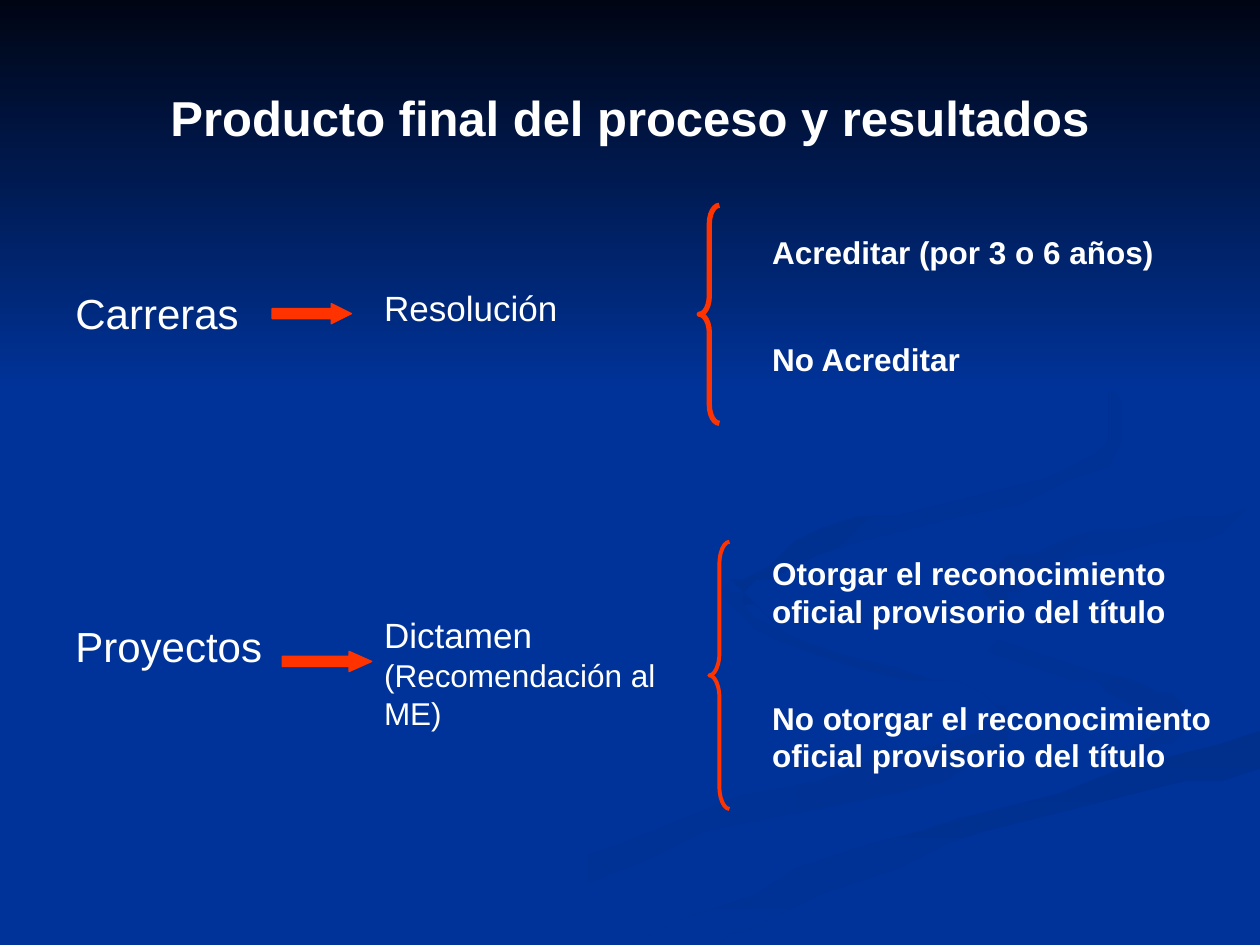
"""Build the slide on final products and results on a 100 by 75 grid of square cells."""
from dataclasses import dataclass
from typing import NamedTuple

from pptx import Presentation, util as u
from pptx.dml.color import RGBColor
from pptx.enum import shapes, text

COLUMNS, ROWS = 100, 75
CELL = u.Inches(0.1)
CURVE_STEPS = 5
FONT = "Arial"
WHITE = RGBColor(0xFF, 0xFF, 0xFF)
RED = RGBColor(0xFF, 0x33, 0x00)
BLUE = RGBColor(0x00, 0x33, 0x99)
SHADE = RGBColor(0x00, 0x31, 0x93)
DEEP = RGBColor(0x00, 0x2F, 0x8C)
NIGHT = RGBColor(0x00, 0x05, 0x14)


class Box(NamedTuple):
    left: float
    top: float
    width: float
    height: float


@dataclass
class Ribbon:
    start: RGBColor
    end: RGBColor
    angle: int
    edges: list


@dataclass
class Entry:
    runs: list
    before: float = 0
    bold: bool = False


@dataclass
class Column:
    box: Box
    inset: float
    entries: list


@dataclass
class Mark:
    kind: shapes.MSO_SHAPE
    box: Box
    bend: float
    weight: float


RIBBONS = [
    Ribbon(BLUE, SHADE, 0, [
        [(57.5, 46), (62, 50), (76, 54.5), (78, 57.5), (54, 65), (30, 75)],
        [(36, 75), (56, 66.5), (78, 60.5), (78, 55.3), (62, 51), (57, 47)]]),
    Ribbon(BLUE, SHADE, 45, [
        [(72.4, 46.4), (77, 50.5), (92, 54.7), (94, 58), (89.4, 60.5)],
        [(91.8, 58), (87, 54.5), (75, 50), (72.4, 46.4)]]),
    Ribbon(DEEP, BLUE, 90, [
        [(50.3, 75), (63, 69.3), (80, 63.8), (99.8, 58)],
        [(99.8, 61), (82, 65), (65, 71), (57, 75)]]),
    Ribbon(SHADE, BLUE, 45, [
        [(82.6, 49.6), (78, 46), (84, 43), (99.8, 40.2)],
        [(99.8, 42), (86, 44.3), (80.5, 47.5), (82.6, 49.6)]]),
    Ribbon(DEEP, BLUE, 45, [
        [(76.2, 23.3), (86.5, 29), (88, 37), (68, 43), (59.3, 47), (62.2, 50)],
        [(57.7, 46.2), (67.6, 41.4), (85.2, 37.4), (87, 30), (76.2, 23.3)]]),
    Ribbon(NIGHT, BLUE, 90, [[(0, 0), (COLUMNS, 0)], [(COLUMNS, 30.8), (0, 30.8)]]),
]

TEXT_COLUMNS = [
    Column(Box(5, 17.5, 19, 49.5), 5.3, [
        Entry([("Carreras", 24)]),
        Entry([("Proyectos", 24)], before=161.5)]),
    Column(Box(60.3, 18, 37, 46.4), 0.5, [
        Entry([("Acreditar (por 3 o 6 años)", 18)], bold=True),
        Entry([("No Acreditar", 18)], before=39.5, bold=True),
        Entry([("Otorgar el reconocimiento oficial provisorio del título", 18)], before=100.7, bold=True),
        Entry([("No otorgar el reconocimiento oficial provisorio del título", 18)], before=39.5, bold=True)]),
    Column(Box(29.5, 17.8, 24.4, 47.1), 4.9, [
        Entry([("Resolución", 20)]),
        Entry([("Dictamen", 20), (" (Recomendación al ME)", 18)], before=163.4)]),
]

BRACE, ARROW = shapes.MSO_SHAPE.LEFT_BRACE, shapes.MSO_SHAPE.RIGHT_ARROW
MARKS = [
    Mark(BRACE, Box(55.5, 16.3, 1.6, 17.3), 0.92, 3),
    Mark(BRACE, Box(56.3, 43, 1.6, 21.2), 1.12, 2.25),
    Mark(ARROW, Box(21.6, 24.1, 6.3, 1.6), 1, 0.75),
    Mark(ARROW, Box(22.4, 51.7, 7.1, 1.6), 1.12, 0.75),
]


def cells(box: Box) -> list:
    """Convert a box in grid cells to lengths."""
    return [u.Emu(round(value * CELL)) for value in box]


def smooth(edge: list) -> list:
    """Pass a Catmull-Rom curve through the points of an edge."""
    padded = [edge[0], *edge, edge[-1]]
    curve = [edge[0]]
    for knots in zip(padded, padded[1:], padded[2:], padded[3:]):
        for step in range(1, CURVE_STEPS + 1):
            t = step / CURVE_STEPS
            curve.append(tuple(
                b + t * (c - a + t * (2 * a - 5 * b + 4 * c - d + t * (3 * (b - c) + d - a))) / 2
                for a, b, c, d in zip(*knots)))
    return curve


def add_run(paragraph, words: str, *, size: float, bold: bool = False) -> None:
    """Add formatted words to a paragraph."""
    run = paragraph.add_run()
    run.text = words
    run.font.name, run.font.size, run.font.bold = FONT, u.Pt(size), bold
    run.font.color.rgb = WHITE


def draw_title(slide, words: str) -> None:
    """Place and format the title placeholder in front."""
    title = slide.shapes.title
    title.left, title.top, title.width, title.height = cells(Box(5, 3, 90, 12.5))
    title.text_frame.vertical_anchor = text.MSO_ANCHOR.MIDDLE
    paragraph = title.text_frame.paragraphs[0]
    paragraph.alignment = text.PP_ALIGN.CENTER
    add_run(paragraph, words, size=28, bold=True)
    title.element.getparent().append(title.element)


def draw_ribbon(slide, ribbon: Ribbon) -> None:
    """Draw a filled outline of the backdrop."""
    first, *others = [point for edge in ribbon.edges for point in smooth(edge)]
    builder = slide.shapes.build_freeform(*first, scale=CELL)
    builder.add_line_segments(others, close=True)
    shape = builder.convert_to_shape()
    shape.shadow.inherit = False
    shape.line.fill.background()
    shape.fill.gradient()
    shape.fill.gradient_angle = -ribbon.angle % 360
    for stop, color in zip(shape.fill.gradient_stops, (ribbon.start, ribbon.end)):
        stop.color.rgb = color


def draw_column(slide, column: Column) -> None:
    """Draw a column of spaced entries in one text box."""
    frame = slide.shapes.add_textbox(*cells(column.box)).text_frame
    frame.word_wrap = True
    frame.margin_top = round(column.inset * CELL)
    for index, entry in enumerate(column.entries):
        paragraph = frame.add_paragraph() if index else frame.paragraphs[0]
        paragraph.space_before = u.Pt(entry.before)
        for words, size in entry.runs:
            add_run(paragraph, words, size=size, bold=entry.bold)


def draw_mark(slide, mark: Mark) -> None:
    """Draw a red brace or arrow."""
    shape = slide.shapes.add_shape(mark.kind, *cells(mark.box))
    shape.shadow.inherit = False
    shape.line.color.rgb, shape.line.width = RED, u.Pt(mark.weight)
    if mark.kind == ARROW:
        shape.adjustments[1] = mark.bend
        shape.fill.solid()
        shape.fill.fore_color.rgb = RED
    else:
        shape.adjustments[0] = mark.bend
        shape.fill.background()


def main() -> None:
    """Build and save the slide."""
    presentation = Presentation()
    presentation.slide_width, presentation.slide_height = COLUMNS * CELL, ROWS * CELL
    slide = presentation.slides.add_slide(presentation.slide_layouts.get_by_name("Title Only"))
    slide.background.fill.solid()
    slide.background.fill.fore_color.rgb = BLUE
    for draw, items in ((draw_ribbon, RIBBONS), (draw_column, TEXT_COLUMNS), (draw_mark, MARKS)):
        for item in items:
            draw(slide, item)
    draw_title(slide, "Producto final del proceso y resultados")
    presentation.save("out.pptx")


if __name__ == "__main__":
    main()
